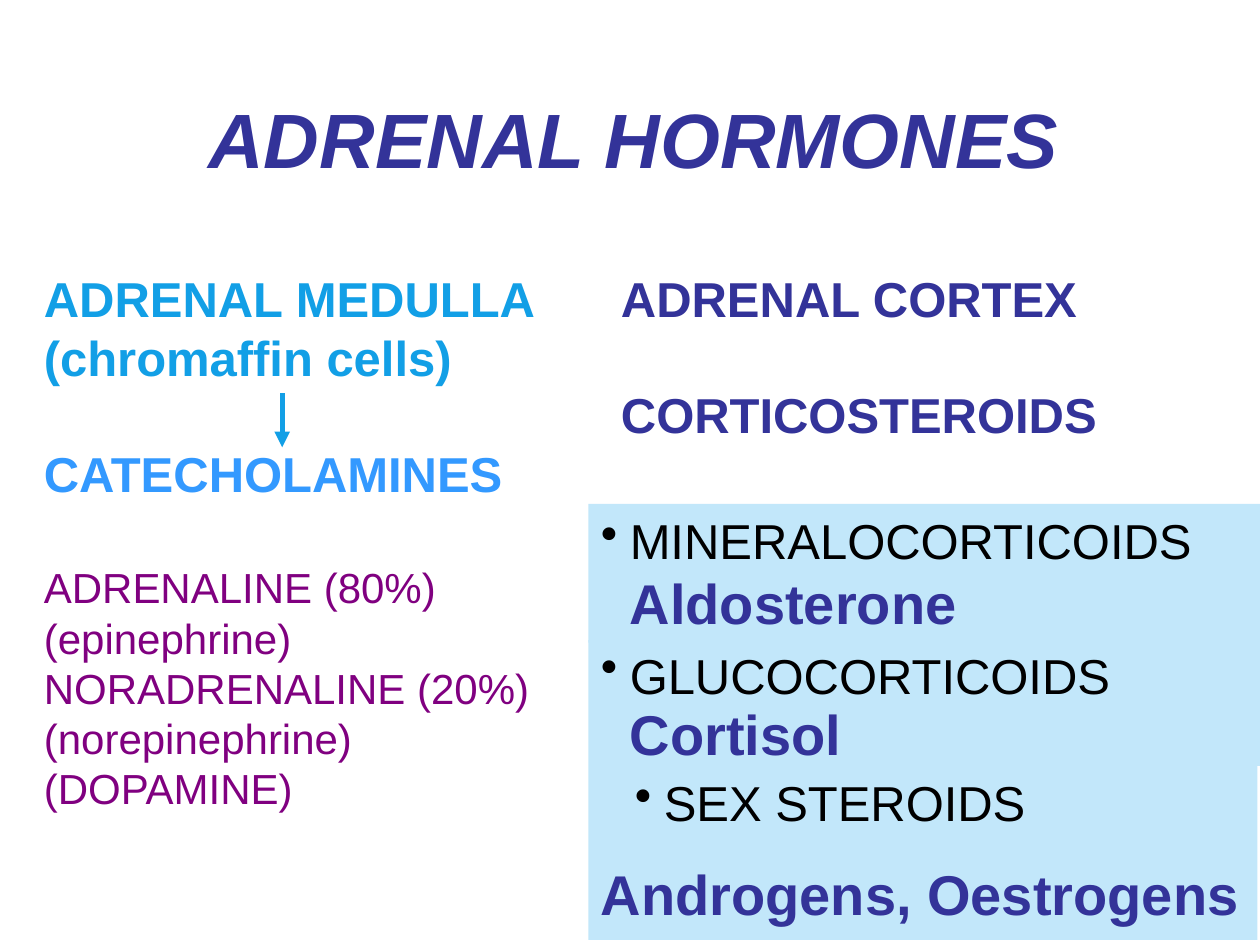
import pptx
import pptx.util
import pptx.dml.color
import pptx.enum.shapes
import pptx.enum.text
import lxml.etree

Inches, Pt = pptx.util.Inches, pptx.util.Pt
TOP = pptx.enum.text.MSO_ANCHOR.TOP
MID = pptx.enum.text.MSO_ANCHOR.MIDDLE
LEFT = pptx.enum.text.PP_ALIGN.LEFT
NS = "{http://schemas.openxmlformats.org/drawingml/2006/main}"
HUES = {"navy": "333399", "cyan": "129FE6", "blue": "3399FF",
        "plum": "800080", "black": "000000", "pale": "C2E7FA"}


def style(font, size, hue, bold):
    font.name = "Arial"
    font.size = Pt(size)
    font.bold = bold
    font.color.rgb = pptx.dml.color.RGBColor.from_string(HUES[hue])


deck = pptx.Presentation()
deck.slide_width, deck.slide_height = Inches(10), Inches(7.5)
slide = deck.slides.add_slide(deck.slide_layouts[6])

title = slide.shapes.add_textbox(Inches(0.78), Inches(0.47), Inches(8.5), Inches(1.25))
title.text_frame.word_wrap = True
title.text_frame.vertical_anchor = MID
para = title.text_frame.paragraphs[0]
para.text = "ADRENAL HORMONES"
para.alignment = pptx.enum.text.PP_ALIGN.CENTER
style(para.font, 44, "navy", True)
para.font.italic = True

columns = [
    ((0.25, 2.17, 4.5, 4.75), [
        ("ADRENAL MEDULLA", 28, "cyan", True, 0),
        ("(chromaffin cells)", 28, "cyan", True, 6.7),
        ("CATECHOLAMINES", 28, "blue", True, 39.4),
        ("ADRENALINE (80%)", 24, "plum", False, 40),
        ("(epinephrine)", 24, "plum", False, 5.7),
        ("NORADRENALINE (20%)", 24, "plum", False, 5.7),
        ("(norepinephrine)", 24, "plum", False, 5.7),
        ("(DOPAMINE)", 24, "plum", False, 5.7)]),
    ((4.83, 2.17, 4.75, 1.83), [
        ("ADRENAL CORTEX", 28, "navy", True, 0),
        ("CORTICOSTEROIDS", 28, "navy", True, 39.4)]),
]
for place, lines in columns:
    box = slide.shapes.add_textbox(*map(Inches, place))
    frame = box.text_frame
    frame.word_wrap = True
    for num, (text, size, hue, bold, gap) in enumerate(lines):
        para = frame.add_paragraph() if num else frame.paragraphs[0]
        para.text = text
        para.line_spacing = 0.8
        para.space_before = Pt(gap)
        style(para.font, size, hue, bold)

arrow = slide.shapes.add_connector(
    pptx.enum.shapes.MSO_CONNECTOR.STRAIGHT,
    Inches(2.24), Inches(3.12), Inches(2.24), Inches(3.55))
arrow.line.width = Pt(3)
arrow.line.color.rgb = pptx.dml.color.RGBColor.from_string(HUES["cyan"])
edge = arrow.line._get_or_add_ln()
lxml.etree.SubElement(edge, NS + "tailEnd", type="triangle")
lxml.etree.SubElement(arrow._element.spPr, NS + "effectLst")

panels = [
    ((4.67, 4, 5.33, 1.1), 1, [
        (0.23, [("MINERALOCORTICOIDS\t", 28, "black", False),
                ("Aldosterone", 32, "navy", True)])]),
    ((4.67, 5.08, 5.33, 1), 0.9, [
        (0.23, [("GLUCOCORTICOIDS", 28, "black", False),
                ("\t", 32, "black", False),
                ("Cortisol", 32, "navy", True)])]),
    ((4.67, 6.08, 5.31, 1.38), 1, [
        (0.5, [("SEX STEROIDS", 28, "black", False)]),
        (0, [("Androgens, Oestrogens", 32, "navy", True)])]),
]
for place, pitch, items in panels:
    panel = slide.shapes.add_shape(
        pptx.enum.shapes.MSO_SHAPE.RECTANGLE, *map(Inches, place))
    panel.shadow.inherit = False
    panel.fill.solid()
    panel.fill.fore_color.rgb = pptx.dml.color.RGBColor.from_string(HUES["pale"])
    panel.line.fill.background()
    frame = panel.text_frame
    frame.word_wrap = True
    frame.vertical_anchor = TOP
    for num, (left, runs) in enumerate(items):
        para = frame.add_paragraph() if num else frame.paragraphs[0]
        para.alignment = LEFT
        para.line_spacing = pitch
        para.space_before = Pt(16 if num else 0)
        if left:
            props = para._p.get_or_add_pPr()
            props.set("marL", str(Inches(left)))
            props.set("indent", str(-Inches(0.23)))
            lxml.etree.SubElement(props, NS + "buChar", char="•")
        for text, size, hue, bold in runs:
            run = para.add_run()
            run.text = text
            style(run.font, size, hue, bold)

deck.save("out.pptx")
